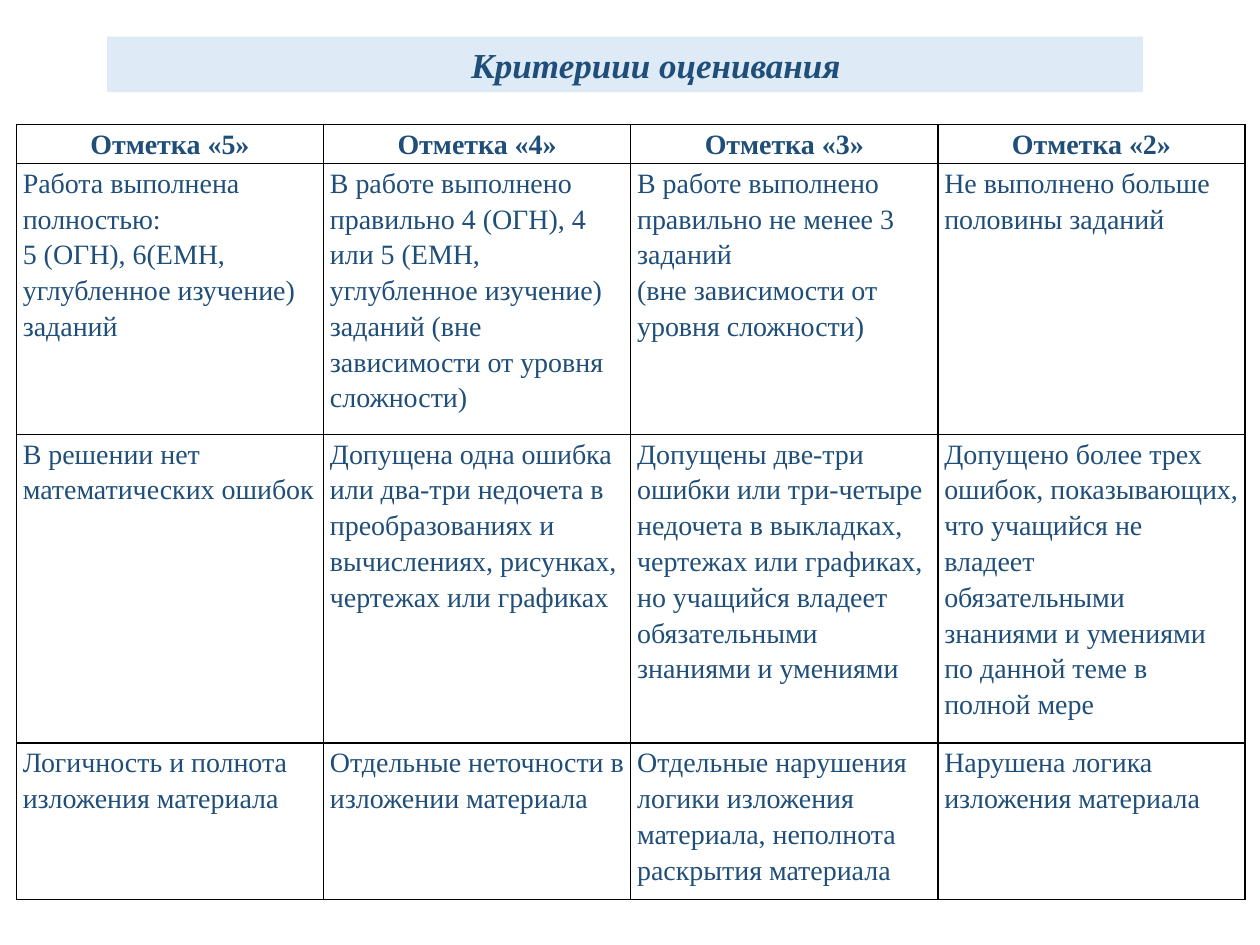
from dataclasses import dataclass

from lxml import etree
from pptx import Presentation
from pptx.dml.color import RGBColor
from pptx.enum.shapes import MSO_SHAPE
from pptx.enum.text import MSO_ANCHOR, PP_ALIGN
from pptx.oxml.ns import qn
from pptx.util import Cm, Pt

RECT = MSO_SHAPE.RECTANGLE
MIDDLE, TOP = MSO_ANCHOR.MIDDLE, MSO_ANCHOR.TOP
CENTER, LEFT = PP_ALIGN.CENTER, PP_ALIGN.LEFT


@dataclass(frozen=True)
class Theme:
    font: str = "Times New Roman"
    ink: RGBColor = RGBColor(0x1F, 0x4E, 0x79)
    band: RGBColor = RGBColor(0xDE, 0xEB, 0xF7)
    paper: RGBColor = RGBColor(0xFF, 0xFF, 0xFF)
    rule: str = "000000"
    title: Pt = Pt(20)
    body: Pt = Pt(16)


THEME = Theme()

TITLE = "Критериии оценивания"
MARKS = [f"Отметка «{mark}»" for mark in (5, 4, 3, 2)]
# Each cell is a list of paragraphs; a newline is a line break.
RULES = [
    [
        ["Работа выполнена полностью:",
         "5 (ОГН), 6(ЕМН, углубленное изучение) заданий"],
        ["В работе выполнено правильно 4 (ОГН), 4 или 5 (ЕМН, углубленное "
         "изучение) заданий (вне зависимости от уровня сложности)"],
        ["В работе выполнено правильно не менее 3 заданий",
         "(вне зависимости от уровня сложности)"],
        ["Не выполнено больше половины заданий"],
    ],
    [
        ["В решении нет математических ошибок"],
        ["Допущена одна ошибка или два-три недочета в преобразованиях и "
         "вычислениях, рисунках, чертежах или графиках"],
        ["Допущены две-три ошибки или три-четыре недочета в выкладках, "
         "чертежах или графиках, но учащийся владеет обязательными "
         "знаниями и умениями"],
        ["Допущено более трех ошибок, показывающих, что учащийся не владеет\n"
         "обязательными знаниями и умениями по данной теме в полной мере"],
    ],
    [
        ["Логичность и полнота изложения материала"],
        ["Отдельные неточности в изложении материала"],
        ["Отдельные нарушения логики изложения материала, неполнота "
         "раскрытия материала"],
        ["Нарушена логика изложения материала"],
    ],
]
HEIGHTS = [Cm(0.79), Cm(5.46), Cm(6.22), Cm(3.15)]


def add_text(para, text, size, bold=False, italic=False):
    for i, line in enumerate(text.split("\n")):
        if i:
            para.add_line_break()
        run = para.add_run()
        run.text = line
        font = run.font
        font.name, font.size = THEME.font, size
        font.bold, font.italic = bold, italic
        font.color.rgb = THEME.ink


def add_rules(cell):
    """Draw a thin line on all four sides of the cell."""
    props = cell._tc.get_or_add_tcPr()
    for side in ("lnL", "lnR", "lnT", "lnB"):
        line = etree.SubElement(props, qn(f"a:{side}"), w=str(Pt(1)))
        fill = etree.SubElement(line, qn("a:solidFill"))
        etree.SubElement(fill, qn("a:srgbClr"), val=THEME.rule)


def fill_cell(cell, paras, head):
    add_rules(cell)
    cell.fill.solid()
    cell.fill.fore_color.rgb = THEME.paper
    cell.margin_left = cell.margin_right = Cm(0.13)
    cell.margin_top = cell.margin_bottom = 0
    cell.vertical_anchor = TOP
    frame = cell.text_frame
    for i, text in enumerate(paras):
        para = frame.add_paragraph() if i else frame.paragraphs[0]
        para.alignment = CENTER if head else LEFT
        para.line_spacing = 1.15
        add_text(para, text, THEME.body, bold=head)


def add_title(slide, left, top, width, height):
    band = slide.shapes.add_shape(RECT, left, top, width, height)
    band.shadow.inherit = False
    band.fill.solid()
    band.fill.fore_color.rgb = THEME.band
    band.line.fill.background()
    frame = band.text_frame
    frame.word_wrap = True
    frame.vertical_anchor = MIDDLE
    para = frame.paragraphs[0]
    para.alignment = CENTER
    para._p.get_or_add_pPr().set("indent", str(Cm(1.25)))
    add_text(para, TITLE, THEME.title, bold=True, italic=True)


def add_grid(slide, left, top, width):
    rows = [[[mark] for mark in MARKS]] + RULES
    grid = slide.shapes.add_table(
        len(rows), len(MARKS), left, top, width, sum(HEIGHTS)).table
    grid.first_row = grid.horz_banding = False
    for col in grid.columns:
        col.width = width // len(MARKS)
    for r, (row, height) in enumerate(zip(rows, HEIGHTS)):
        grid.rows[r].height = height
        for c, paras in enumerate(row):
            fill_cell(grid.cell(r, c), paras, head=r == 0)


def main():
    deck = Presentation()
    deck.slide_width, deck.slide_height = Cm(25.4), Cm(19.05)
    slide = deck.slides.add_slide(deck.slide_layouts[6])
    add_grid(slide, Cm(0.33), Cm(2.51), Cm(24.77))
    add_title(slide, Cm(2.16), Cm(0.74), Cm(20.88), Cm(1.12))
    deck.save("out.pptx")


if __name__ == "__main__":
    main()
